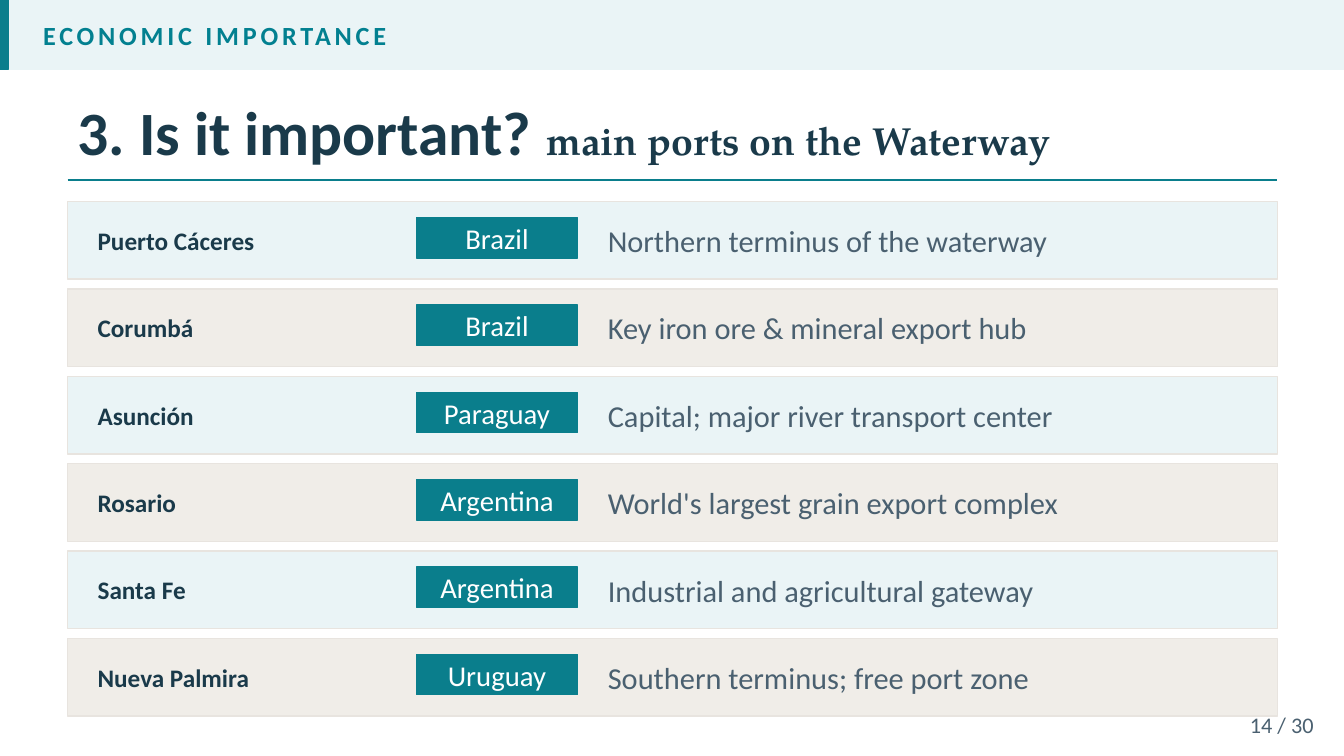
from lxml import etree
from pptx import Presentation
from pptx.dml.color import RGBColor
from pptx.enum.shapes import MSO_CONNECTOR, MSO_SHAPE
from pptx.enum.text import MSO_ANCHOR, MSO_AUTO_SIZE, PP_ALIGN
from pptx.oxml.ns import qn
from pptx.util import Inches, Pt

RECTANGLE = MSO_SHAPE.RECTANGLE
STRAIGHT = MSO_CONNECTOR.STRAIGHT
MIDDLE = MSO_ANCHOR.MIDDLE
NO_AUTOFIT = MSO_AUTO_SIZE.NONE
LEFT, CENTER, RIGHT = PP_ALIGN.LEFT, PP_ALIGN.CENTER, PP_ALIGN.RIGHT

COLORS = {
    "teal": "0A7E8C",
    "heading": "028090",
    "ice": "EAF4F6",
    "sand": "F0EDE8",
    "border": "E8E4DF",
    "navy": "1A3A4A",
    "slate": "4A6070",
    "white": "FFFFFF",
}
FORMATS = {
    "section": {"size": Pt(18.7), "bold": True, "name": "Calibri", "color": "heading"},
    "title": {"size": Pt(44), "bold": True, "name": "Calibri", "color": "navy"},
    "gap": {"size": Pt(41.6), "bold": True, "name": "TeX Gyre Pagella", "color": "navy"},
    "subtitle": {"size": Pt(28), "bold": True, "name": "TeX Gyre Pagella", "color": "navy"},
    "port": {"size": Pt(18), "bold": True, "name": "Calibri", "color": "navy"},
    "country": {"size": Pt(20.5), "bold": False, "name": "Calibri", "color": "white"},
    "role": {"size": Pt(21.7), "bold": False, "name": "Calibri", "color": "slate"},
    "page": {"size": Pt(15.9), "bold": False, "name": "Calibri", "color": "slate"},
}
PORTS = [
    ("Puerto Cáceres", "Brazil", "Northern terminus of the waterway"),
    ("Corumbá", "Brazil", "Key iron ore & mineral export hub"),
    ("Asunción", "Paraguay", "Capital; major river transport center"),
    ("Rosario", "Argentina", "World's largest grain export complex"),
    ("Santa Fe", "Argentina", "Industrial and agricultural gateway"),
    ("Nueva Palmira", "Uruguay", "Southern terminus; free port zone"),
]
ROW_TOP = 2
ROW_PITCH = 5.2 / len(PORTS)

presentation = Presentation()
presentation.slide_width = Inches(13.33)
presentation.slide_height = Inches(7.5)
slide = presentation.slides.add_slide(presentation.slide_layouts[5])


def add_box(left, top, width, height, fill, line):
    box = slide.shapes.add_shape(
        RECTANGLE, Inches(left), Inches(top), Inches(width), Inches(height))
    box.shadow.inherit = False
    box.fill.solid()
    box.fill.fore_color.rgb = RGBColor.from_string(COLORS[fill])
    box.line.color.rgb = RGBColor.from_string(COLORS[line])
    box.line.width = Pt(1)
    return box


def write(shape, alignment, *pieces):
    frame = shape.text_frame
    frame.word_wrap = True
    frame.auto_size = NO_AUTOFIT
    frame.vertical_anchor = MIDDLE
    paragraph = frame.paragraphs[0]
    paragraph.alignment = alignment
    for text, style in pieces:
        run = paragraph.add_run()
        run.text = text
        for attribute, value in FORMATS[style].items():
            if attribute == "color":
                run.font.color.rgb = RGBColor.from_string(COLORS[value])
            else:
                setattr(run.font, attribute, value)
    return paragraph


add_box(0, 0, 13.33, 0.69, "ice", "ice")
add_box(0, 0, 0.08, 0.69, "teal", "teal")

section = slide.shapes.add_textbox(Inches(0.33), 0, Inches(12.7), Inches(0.69))
section_paragraph = write(section, LEFT, ("ECONOMIC IMPORTANCE", "section"))
section_paragraph.runs[0].font._element.set("spc", "270")

title = slide.shapes.title
title.left, title.top = Inches(0.67), Inches(0.83)
title.width, title.height = Inches(12), Inches(0.93)
write(title, LEFT, ("3. Is it important?", "title"), (" ", "gap"),
      ("main ports on the Waterway", "subtitle"))

rule = slide.shapes.add_connector(
    STRAIGHT, Inches(0.67), Inches(1.79), Inches(12.67), Inches(1.79))
rule.line.color.rgb = RGBColor.from_string(COLORS["teal"])
rule.line.width = Pt(1.5)
etree.SubElement(rule._element.spPr, qn("a:effectLst"))

page = slide.shapes.add_textbox(Inches(12), Inches(7), Inches(1.13), Inches(0.37))
write(page, RIGHT, ("14 / 30", "page"))

for index, (port, country, role) in enumerate(PORTS):
    top = ROW_TOP + index * ROW_PITCH
    add_box(0.67, top, 12, 0.77, ("ice", "sand")[index % 2], "border")
    badge = add_box(4.13, top + 0.16, 1.6, 0.4, "teal", "teal")
    badge.text_frame.margin_top = badge.text_frame.margin_bottom = 0
    write(badge, CENTER, (country, "country"))
    for left, width, text, style in (
            (0.87, 3.2, port, "port"), (5.93, 6.53, role, "role")):
        label = slide.shapes.add_textbox(
            Inches(left), Inches(top + 0.13), Inches(width), Inches(0.51))
        write(label, LEFT, (text, style))

presentation.save("out.pptx")
